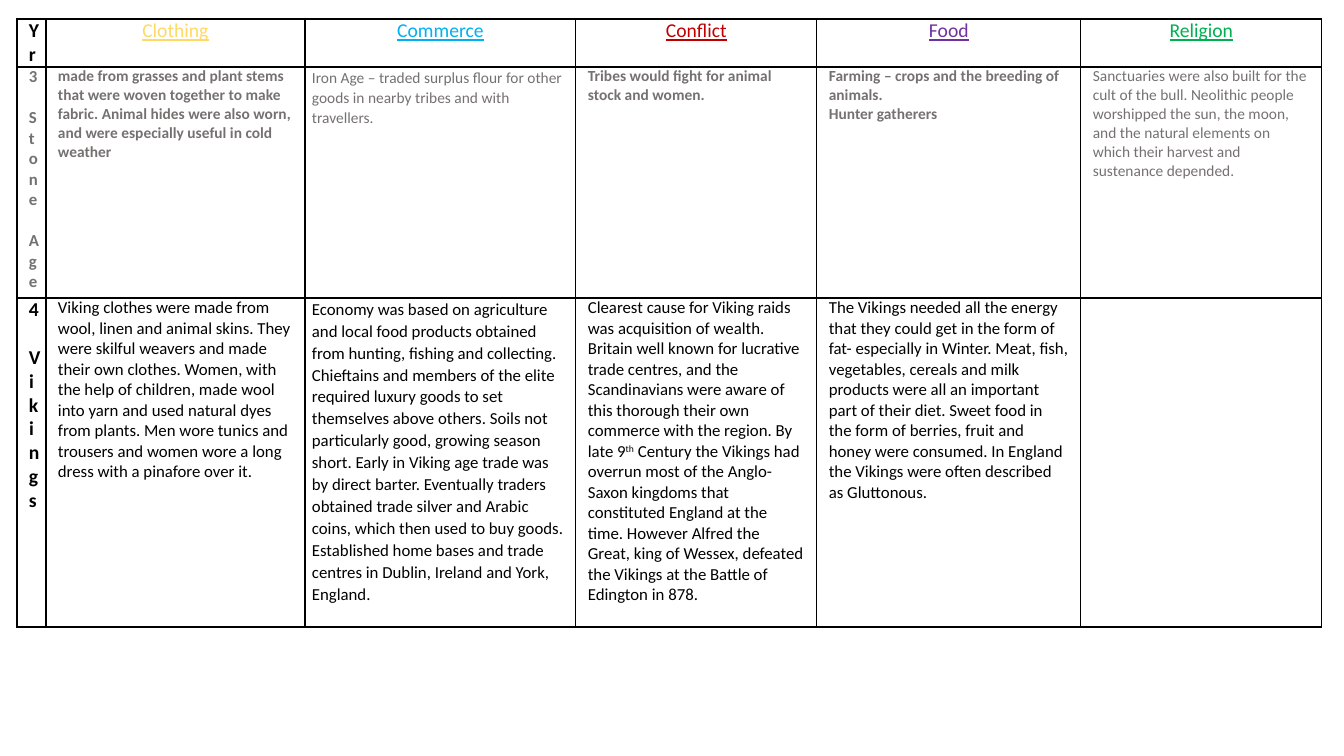
from lxml import etree
from pptx import Presentation
from pptx import util as u
from pptx.dml.color import RGBColor
from pptx.enum import text
from pptx.oxml.ns import qn

# Content: each cell is a list of paragraphs
BLACK, GREY = "000000", "767171"
HEADINGS = [("Yr", BLACK), ("Clothing", "FFD966"), ("Commerce", "00B0F0"),
            ("Conflict", "C00000"), ("Food", "7030A0"), ("Religion", "00B050")]
STONE_AGE = [
    ["3", "Stone", "Age"],
    ["made from grasses and plant stems that were woven together to make fabric. Animal hides "
     "were also worn, and were especially useful in cold weather"],
    ["Iron Age – traded surplus flour for other goods in nearby tribes and with travellers."],
    ["Tribes would fight for animal stock and women."],
    ["Farming – crops and the breeding of animals.", "Hunter gatherers"],
    ["Sanctuaries were also built for the cult of the bull. Neolithic people worshipped the sun, "
     "the moon, and the natural elements on which their harvest and sustenance depended."],
]
VIKINGS = [
    ["4", "Vikings"],
    ["Viking clothes were made from wool, linen and animal skins. They were skilful weavers and "
     "made their own clothes. Women, with the help of children, made wool into yarn and used "
     "natural dyes from plants. Men wore tunics and trousers and women wore a long dress with a "
     "pinafore over it."],
    ["Economy was based on agriculture and local food products obtained from hunting, fishing and "
     "collecting. Chieftains and members of the elite required luxury goods to set themselves "
     "above others. Soils not particularly good, growing season short. Early in Viking age trade "
     "was by direct barter. Eventually traders obtained trade silver and Arabic coins, which then "
     "used to buy goods. Established home bases and trade centres in Dublin, Ireland and York, "
     "England."],
    ["Clearest cause for Viking raids was acquisition of wealth. Britain well known for lucrative "
     "trade centres, and the Scandinavians were aware of this thorough their own commerce with "
     "the region. By late 9^th^ Century the Vikings had overrun most of the Anglo-Saxon kingdoms "
     "that constituted England at the time. However Alfred the Great, king of Wessex, defeated "
     "the Vikings at the Battle of Edington in 878."],
    ["The Vikings needed all the energy that they could get in the form of fat- especially in "
     "Winter. Meat, fish, vegetables, cereals and milk products were all an important part of "
     "their diet. Sweet food in the form of berries, fruit and honey were consumed. In England "
     "the Vikings were often described as Gluttonous."],
    [],
]
# Topic rows: cells, year size, body size, colour, bold columns
TOPIC_ROWS = [(STONE_AGE, 12, 11, GREY, {0, 1, 3, 4}), (VIKINGS, 14, 12, BLACK, {0})]

COLUMN_WIDTHS = [29, 259, 271, 241, 264, 241]
ROW_HEIGHTS = [48, 231, 329]
TABLE_LEFT, TABLE_TOP = 17, 19
YEAR, COMMERCE = 0, 2
LINE_HEIGHT = 1.22


def px(length):
    return u.Emu(round(length * 914400 / 100.8))


def rgb(value):
    return RGBColor.from_string(value)


def add_borders(cell):
    properties = cell._tc.get_or_add_tcPr()
    for side in ("lnL", "lnR", "lnT", "lnB"):
        line = etree.SubElement(properties, qn(f"a:{side}"), w=str(u.Pt(1)))
        fill = etree.SubElement(line, qn("a:solidFill"))
        etree.SubElement(fill, qn("a:srgbClr"), val=BLACK)


def fill_cell(cell, column, paragraphs, size, color, bold, centered, underline=False):
    add_borders(cell)
    cell.fill.background()
    cell.margin_left = cell.margin_right = px(7 if column == COMMERCE and not centered else 12)
    cell.margin_top = cell.margin_bottom = 0
    for index, content in enumerate(paragraphs):
        frame = cell.text_frame
        paragraph = frame.add_paragraph() if index else frame.paragraphs[0]
        paragraph.alignment = text.PP_ALIGN.CENTER if centered else text.PP_ALIGN.LEFT
        if column == COMMERCE and not centered:
            paragraph.line_spacing = 1.07
        if column == YEAR and index:
            paragraph.space_before = u.Pt(round(size * LINE_HEIGHT, 1))
        # Every second part between carets is superscript
        for part, words in enumerate(content.split("^")):
            run = paragraph.add_run()
            run.text = words
            run.font.name = "Calibri"
            run.font.size = u.Pt(size)
            run.font.bold = bold
            run.font.underline = underline
            run.font.color.rgb = rgb(color)
            if part % 2:
                run._r.get_or_add_rPr().set("baseline", "30000")


presentation = Presentation()
presentation.slide_width, presentation.slide_height = px(1344), px(756)
slide = presentation.slides.add_slide(presentation.slide_layouts[6])

# Table grid
table = slide.shapes.add_table(
    len(ROW_HEIGHTS), len(COLUMN_WIDTHS), px(TABLE_LEFT), px(TABLE_TOP),
    px(sum(COLUMN_WIDTHS)), px(sum(ROW_HEIGHTS))).table
table.first_row = table.horz_banding = False
for column, width in zip(table.columns, COLUMN_WIDTHS):
    column.width = px(width)
for row, height in zip(table.rows, ROW_HEIGHTS):
    row.height = px(height)

# Headings
for column, (heading, color) in enumerate(HEADINGS):
    is_year = column == YEAR
    fill_cell(table.cell(0, column), column, [heading], 14, color, is_year, True, not is_year)

# Topic rows
for row, (cells, year_size, body_size, color, bold_columns) in enumerate(TOPIC_ROWS, 1):
    for column, paragraphs in enumerate(cells):
        is_year = column == YEAR
        fill_cell(table.cell(row, column), column, paragraphs,
                  year_size if is_year else body_size, color, column in bold_columns, is_year)

presentation.save("out.pptx")
